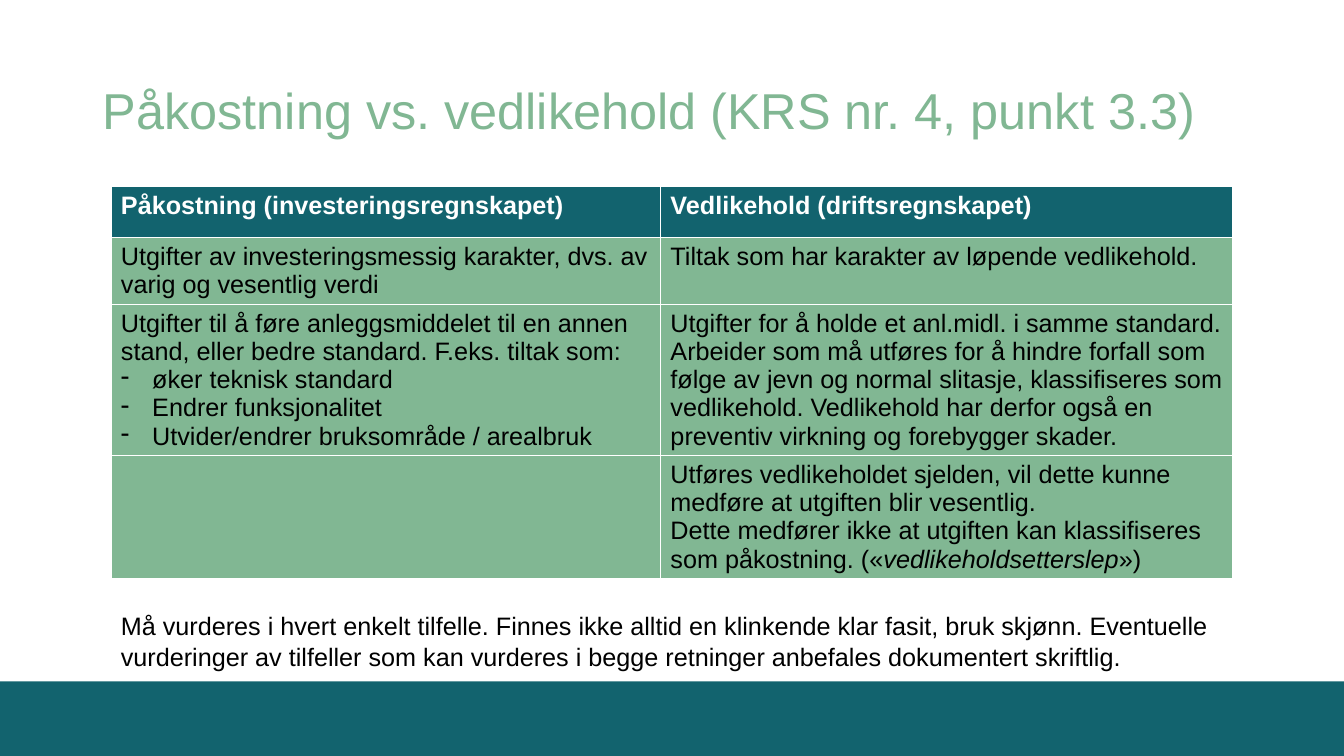
from lxml.etree import SubElement
from pptx import Presentation
from pptx.dml.color import RGBColor
from pptx.enum.shapes import MSO_SHAPE
from pptx.enum.text import MSO_ANCHOR, MSO_AUTO_SIZE, PP_ALIGN
from pptx.oxml.ns import qn
from pptx.util import Emu, Pt

TEAL, GREEN, WHITE, BLACK = "12636E", "81B793", "FFFFFF", "000000"
BULLET_INDENT = 31

COLUMN_WIDTHS = [545, 568]
ROW_HEIGHTS = [51, 52, 61, 52]

# A cell is a list of paragraphs; "- " marks a list item, a tuple holds runs
# of which every second one is italic.
CELLS = [
    [["Påkostning (investeringsregnskapet)"],
     ["Vedlikehold (driftsregnskapet)"]],
    [["Utgifter av investeringsmessig karakter, dvs. av varig og vesentlig verdi"],
     ["Tiltak som har karakter av løpende vedlikehold."]],
    [["Utgifter til å føre anleggsmiddelet til en annen stand, eller bedre "
      "standard. F.eks. tiltak som:",
      "- øker teknisk standard",
      "- Endrer funksjonalitet",
      "- Utvider/endrer bruksområde / arealbruk"],
     ["Utgifter for å holde et anl.midl. i samme standard.",
      "Arbeider som må utføres for å hindre forfall som følge av jevn og normal "
      "slitasje, klassifiseres som vedlikehold. Vedlikehold har derfor også en "
      "preventiv virkning og forebygger skader."]],
    [[],
     ["Utføres vedlikeholdet sjelden, vil dette kunne medføre at utgiften blir "
      "vesentlig.",
      ("Dette medfører ikke at utgiften kan klassifiseres som påkostning. («",
       "vedlikeholdsetterslep", "»)")]],
]

NOTE = ("Må vurderes i hvert enkelt tilfelle. Finnes ikke alltid en klinkende klar "
        "fasit, bruk skjønn. Eventuelle vurderinger av tilfeller som kan vurderes i "
        "begge retninger anbefales dokumentert skriftlig.")


def px(n):
    """Convert px, 100 to the inch, into EMU."""
    return Emu(n * 9144)


def rgb(color):
    return RGBColor.from_string(color)


def fill(obj, color):
    obj.fill.solid()
    obj.fill.fore_color.rgb = rgb(color)


def add_run(p, text, color, size=18, **formats):
    r = p.add_run()
    r.text = text
    r.font.color.rgb = rgb(color)
    for name, value in {"name": "Arial", "size": Pt(size), **formats}.items():
        setattr(r.font, name, value)


def add_dash(p):
    pPr = p._p.get_or_add_pPr()
    pPr.set("marL", str(px(BULLET_INDENT)))
    pPr.set("indent", str(-px(BULLET_INDENT)))
    SubElement(pPr, qn("a:buFontTx"))
    SubElement(pPr, qn("a:buChar"), char="-")


def write_paragraphs(tf, paragraphs, color, bold=False):
    for i, content in enumerate(paragraphs):
        p = tf.add_paragraph() if i else tf.paragraphs[0]
        runs = content if isinstance(content, tuple) else (content,)
        if runs[0].startswith("- "):
            add_dash(p)
            runs = (runs[0][2:],)
        for j, text in enumerate(runs):
            add_run(p, text, color, bold=bold, italic=j % 2 == 1)


def add_band(s, x, y, w, h):
    band = s.shapes.add_shape(MSO_SHAPE.RECTANGLE, px(x), px(y), px(w), px(h))
    band.shadow.inherit = False
    fill(band, TEAL)
    band.line.fill.background()


def set_title(s, text, x, y, w, h):
    title = s.shapes.title
    title.left, title.top, title.width, title.height = map(px, (x, y, w, h))
    tf = title.text_frame
    tf.word_wrap = True
    tf.auto_size = MSO_AUTO_SIZE.NONE
    tf.vertical_anchor = MSO_ANCHOR.MIDDLE
    p = tf.paragraphs[0]
    p.alignment = PP_ALIGN.LEFT
    p.line_spacing = 0.9
    add_run(p, text, GREEN, 36)


def add_comparison(s, x, y, w, h):
    frame = s.shapes.add_table(len(CELLS), len(COLUMN_WIDTHS),
                               px(x), px(y), px(w), px(h))
    table = frame.table
    table.horz_banding = False
    for column, width in zip(table.columns, COLUMN_WIDTHS):
        column.width = px(width)
    for i, (row, height) in enumerate(zip(table.rows, ROW_HEIGHTS)):
        row.height = px(height)
        header = i == 0
        for cell, paragraphs in zip(row.cells, CELLS[i]):
            fill(cell, TEAL if header else GREEN)
            write_paragraphs(cell.text_frame, paragraphs,
                             WHITE if header else BLACK, header)
    frame.height = px(h)


def add_note(s, text, x, y, w, h):
    tf = s.shapes.add_textbox(px(x), px(y), px(w), px(h)).text_frame
    tf.word_wrap = True
    tf.auto_size = MSO_AUTO_SIZE.SHAPE_TO_FIT_TEXT
    write_paragraphs(tf, [text], BLACK)


def main():
    prs = Presentation()
    prs.slide_width, prs.slide_height = px(1333), px(750)
    s = prs.slides.add_slide(prs.slide_layouts[5])
    add_band(s, 0, 676, 1333, 74)
    set_title(s, "Påkostning vs. vedlikehold (KRS nr. 4, punkt 3.3)", 92, 40, 1150, 145)
    add_comparison(s, 110, 185, sum(COLUMN_WIDTHS), 411)
    add_note(s, NOTE, 110, 601, 1112, 71)
    prs.save("out.pptx")


if __name__ == "__main__":
    main()
